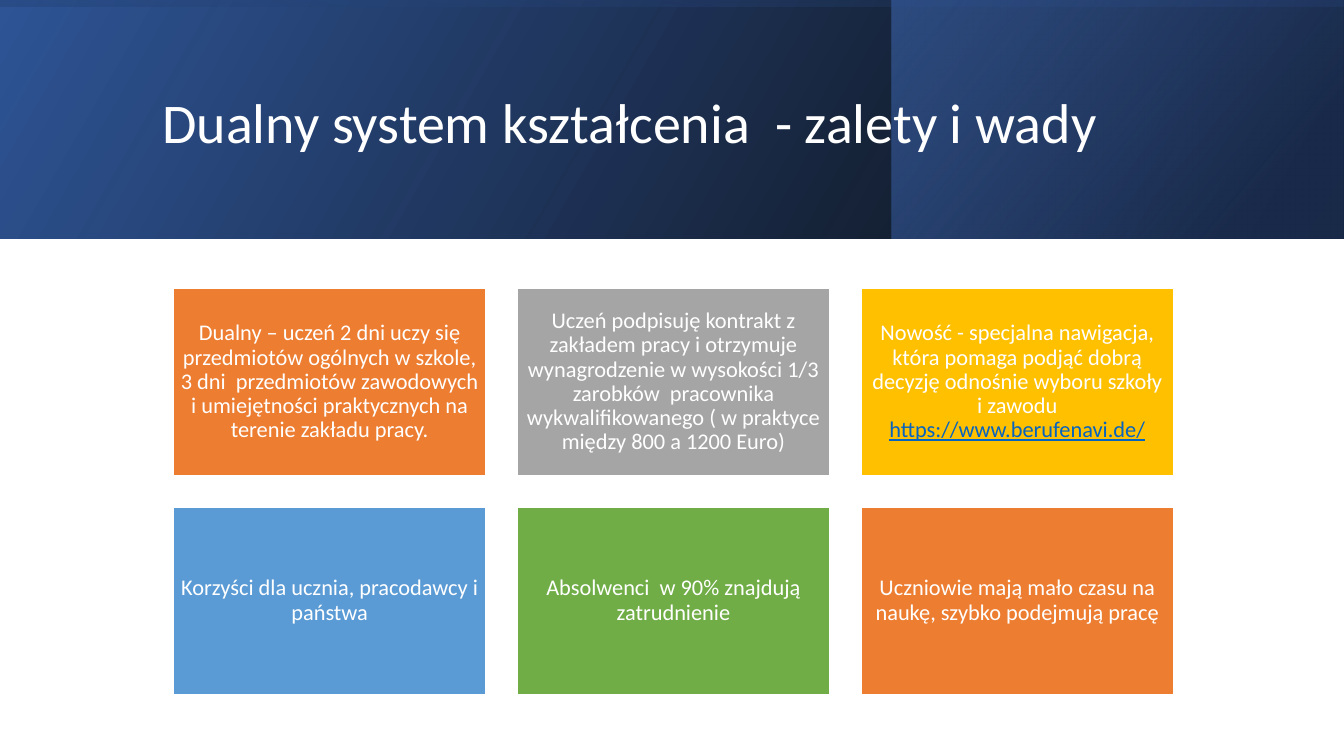
from lxml import etree
from pptx import Presentation
from pptx import util as u
from pptx.dml.color import RGBColor
from pptx.enum import shapes, text
from pptx.oxml.ns import qn

HUES = {
    "white": "FFFFFF", "black": "000000", "navy": "203864", "royal": "2F5597",
    "azure": "4472C4", "orange": "ED7D31", "grey": "A5A5A5", "gold": "FFC000",
    "sky": "5B9BD5", "green": "70AD47", "link": "0563C1",
}

# Place, rotation, clockwise angle, stops of (position, colour, opacity)
BANDS = [
    ((0, 0, 13.33, 2.37), 0, 330, [(0, "black", 96), (100, "royal", 100)]),
    ((8.84, 0, 4.48, 2.37), 0, 320, [(19, "navy", 68), (100, "azure", 48)]),
    ((5.48, -5.48, 2.37, 13.33), 270, 350, [(23, "royal", 16), (99, "black", 45)]),
]

TILES = [
    ("orange", "Dualny – uczeń 2 dni uczy się przedmiotów ogólnych w szkole, "
               "3 dni  przedmiotów zawodowych i umiejętności praktycznych na "
               "terenie zakładu pracy.", ""),
    ("grey", "Uczeń podpisuję kontrakt z zakładem pracy i otrzymuje "
             "wynagrodzenie w wysokości 1/3 zarobków  pracownika "
             "wykwalifikowanego ( w praktyce między 800 a 1200 Euro)", ""),
    ("gold", "Nowość - specjalna nawigacja, która pomaga podjąć dobrą decyzję "
             "odnośnie wyboru szkoły i zawodu ", "https://www.berufenavi.de/"),
    ("sky", "Korzyści dla ucznia, pracodawcy i państwa", ""),
    ("green", "Absolwenci  w 90% znajdują zatrudnienie", ""),
    ("orange", "Uczniowie mają mało czasu na naukę, szybko podejmują pracę", ""),
]


def rgb(name):
    return RGBColor.from_string(HUES[name])


def apply(item, values):
    for key, value in values.items():
        setattr(item, key, value)


class Deck:
    """Holds the text style and the current slide."""

    font = "Calibri"
    frame = {"word_wrap": True, "vertical_anchor": text.MSO_ANCHOR.MIDDLE,
             "auto_size": text.MSO_AUTO_SIZE.NONE}
    inset = {f"margin_{side}": u.Inches(0.07)
             for side in ("left", "top", "right", "bottom")}

    def __init__(self, slide):
        self.slide = slide

    def rect(self, place):
        shape = self.slide.shapes.add_shape(
            shapes.MSO_SHAPE.RECTANGLE, *map(u.Inches, place))
        shape.shadow.inherit = False
        return shape

    def add_run(self, para, words, size, hue="white", **extra):
        run = para.add_run()
        run.text = words
        apply(run.font, {"name": self.font, "size": u.Pt(size), **extra})
        run.font.color.rgb = rgb(hue)

    def band(self, place, turn, angle, stops):
        """Add a mirrored gradient band with translucent stops."""
        shape = self.rect(place)
        shape.rotation = turn
        shape.line.fill.background()
        shape.fill.gradient()
        shape.fill.gradient_angle = 360 - angle
        for stop, (pos, hue, alpha) in zip(shape.fill.gradient_stops, stops):
            stop.position = pos / 100
            stop.color.rgb = rgb(hue)
        props = shape._element.spPr
        props.find(qn("a:xfrm")).set("flipH", "1")
        for node, (pos, hue, alpha) in zip(props.iter(qn("a:srgbClr")), stops):
            etree.SubElement(node, qn("a:alpha")).set("val", str(alpha * 1000))

    def title(self, words, place, size):
        shape = self.slide.shapes.title
        self.slide.shapes._spTree.append(shape._element)
        sides = ("left", "top", "width", "height")
        apply(shape, dict(zip(sides, map(u.Inches, place))))
        apply(shape.text_frame, self.frame)
        para = shape.text_frame.paragraphs[0]
        apply(para, {"alignment": text.PP_ALIGN.LEFT, "line_spacing": 0.9})
        self.add_run(para, words, size)

    def tile(self, place, hue, words, link):
        shape = self.rect(place)
        shape.fill.solid()
        shape.fill.fore_color.rgb = rgb(hue)
        shape.line.color.rgb = rgb("white")
        shape.line.width = u.Pt(1)
        apply(shape.text_frame, {**self.frame, **self.inset})
        para = shape.text_frame.paragraphs[0]
        apply(para, {"alignment": text.PP_ALIGN.CENTER, "line_spacing": 0.9})
        self.add_run(para, words, 16)
        if link:
            self.add_run(para, link, 16, "link", underline=True)


def main():
    show = Presentation()
    show.slide_width, show.slide_height = u.Inches(13.33), u.Inches(7.5)
    deck = Deck(show.slides.add_slide(show.slide_layouts[5]))
    for band in BANDS:
        deck.band(*band)
    deck.title("Dualny system kształcenia  - zalety i wady",
               (1.51, 0.38, 10.63, 1.72), 40)
    for i, tile in enumerate(TILES):
        row, col = divmod(i, 3)
        deck.tile((1.72 + 3.41 * col, 2.86 + 2.17 * row, 3.1, 1.86), *tile)
    show.save("out.pptx")


if __name__ == "__main__":
    main()
